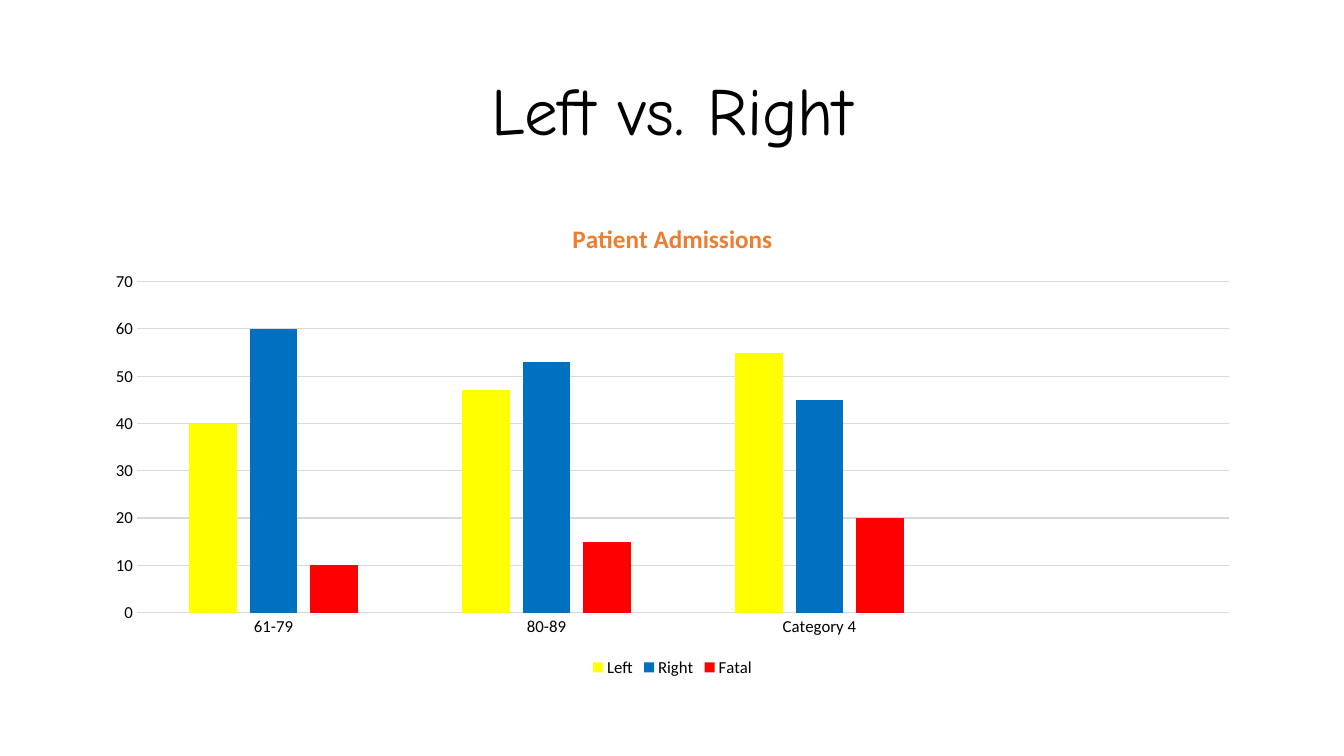
from pptx import Presentation
from pptx.chart.data import CategoryChartData
from pptx.dml.color import RGBColor
from pptx.enum import chart as ch, text
from pptx.util import Inches, Pt

TITLE = "Left vs. Right"
HEAD = "Patient Admissions"
CATS = ["61-79", "80-89", "Category 4", ""]
SERIES = [
    ("Left", (40, 47, 55, None), "FFFF00"),
    ("Right", (60, 53, 45, None), "0070C0"),
    ("Fatal", (10, 15, 20, None), "FF0000"),
]
BLACK, GREY, ORANGE = "000000", "D9D9D9", "ED7D31"
LEFT, WIDTH = Inches(0.92), Inches(11.5)


def style(font, size, color, name="Calibri", bold=False):
    font.size, font.name, font.bold = Pt(size), name, bold
    font.color.rgb = RGBColor.from_string(color)


def rule(line):
    """Give an axis or gridline the thin grey stroke."""
    line.width = Pt(0.75)
    line.color.rgb = RGBColor.from_string(GREY)


def add_title(slide):
    box = slide.shapes.title
    box.left, box.top, box.width, box.height = LEFT, Inches(0.4), WIDTH, Inches(1.45)
    frame = box.text_frame
    frame.word_wrap = True
    frame.vertical_anchor = text.MSO_ANCHOR.MIDDLE
    para = frame.paragraphs[0]
    para.alignment = text.PP_ALIGN.CENTER
    para.line_spacing = 0.9
    run = para.add_run()
    run.text = TITLE
    style(run.font, 48, BLACK, "Comic Neue")


def add_bars(slide):
    data = CategoryChartData()
    data.categories = CATS
    for name, vals, _ in SERIES:
        data.add_series(name, vals)
    chart = slide.shapes.add_chart(
        ch.XL_CHART_TYPE.COLUMN_CLUSTERED, LEFT, Inches(2), WIDTH, Inches(4.76), data
    ).chart
    style(chart.font, 10, BLACK)

    chart.has_title = True
    run = chart.chart_title.text_frame.paragraphs[0].add_run()
    run.text = HEAD
    style(run.font, 18, ORANGE, bold=True)
    chart.chart_title.include_in_layout = False

    chart.has_legend = True
    chart.legend.position = ch.XL_LEGEND_POSITION.BOTTOM
    chart.legend.include_in_layout = False
    style(chart.legend.font, 12, BLACK)

    cat, val = chart.category_axis, chart.value_axis
    for axis in (cat, val):
        axis.major_tick_mark = axis.minor_tick_mark = ch.XL_TICK_MARK.NONE
        style(axis.tick_labels.font, 12, BLACK)
    rule(cat.format.line)
    val.format.line.fill.background()
    val.has_major_gridlines = True
    rule(val.major_gridlines.format.line)
    val.minimum_scale, val.maximum_scale, val.major_unit = 0, 70, 10

    plot = chart.plots[0]
    plot.vary_by_categories = False
    plot.gap_width, plot.overlap = 219, -27
    for bars, (_, _, color) in zip(plot.series, SERIES):
        bars.format.fill.solid()
        bars.format.fill.fore_color.rgb = RGBColor.from_string(color)


def main():
    deck = Presentation()
    deck.slide_width, deck.slide_height = Inches(13.33), Inches(7.5)
    slide = deck.slides.add_slide(deck.slide_layouts[5])
    add_title(slide)
    add_bars(slide)
    deck.save("out.pptx")


if __name__ == "__main__":
    main()
